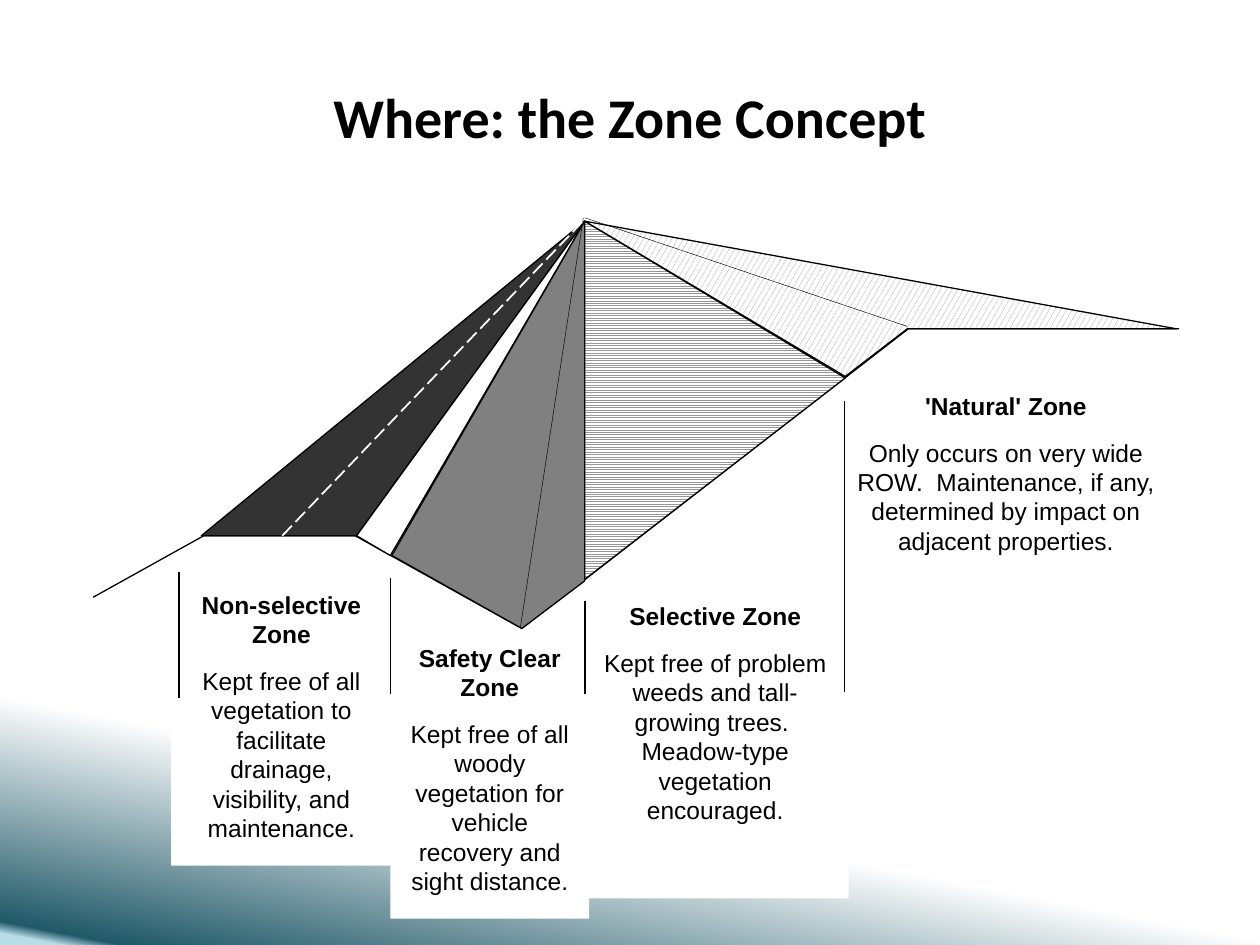
from dataclasses import dataclass

from lxml import etree
from pptx import Presentation
from pptx.dml.color import RGBColor
from pptx.enum.dml import MSO_LINE, MSO_PATTERN
from pptx.enum.shapes import MSO_CONNECTOR, MSO_SHAPE
from pptx.enum.text import MSO_ANCHOR, PP_ALIGN
from pptx.oxml import parse_xml
from pptx.oxml.ns import nsdecls, qn
from pptx.slide import Slide
from pptx.util import Cm, Pt

CENTER = PP_ALIGN.CENTER
TOP, MIDDLE = MSO_ANCHOR.TOP, MSO_ANCHOR.MIDDLE
RECTANGLE = MSO_SHAPE.RECTANGLE
STRAIGHT = MSO_CONNECTOR.STRAIGHT
LONG_DASH = MSO_LINE.LONG_DASH
HORIZONTAL = MSO_PATTERN.LIGHT_HORIZONTAL
CONFETTI = MSO_PATTERN.LARGE_CONFETTI

BLACK, WHITE, HATCH = "000000", "FFFFFF", "969696"
BACKGROUND_STOPS = [(79, WHITE), (98, "215968"), (99, "B7DEE8")]
BACKGROUND_ANGLE = 101

Point = tuple[float, float]  # centimetres


@dataclass
class Area:
    points: list[Point]
    fill: str | None = None
    pattern: MSO_PATTERN | None = None
    closed: bool = True


@dataclass
class Line:
    start: Point
    end: Point
    color: str = BLACK
    width: float = 0.75
    dash: MSO_LINE | None = None


@dataclass
class Zone:
    left: float
    top: float
    width: float
    height: float
    heading: str
    description: str


VANISHING_POINT = (11.79, 4.46)
DITCH = (10.52, 12.67)
AREAS = [
    Area([(1.88, 12.04), (4.11, 10.8), (7.16, 10.8), DITCH, (18.31, 6.63), (23.77, 6.63)],
         closed=False),
    Area([VANISHING_POINT, (7.19, 10.8), (4.06, 10.8)], "333333"),
    Area([VANISHING_POINT, (7.87, 11.2), (7.19, 10.8)], WHITE),
    Area([VANISHING_POINT, (11.79, 11.71), DITCH, (7.9, 11.2)], "808080"),
    Area([VANISHING_POINT, (17.04, 7.62), (11.79, 11.68)], HATCH, HORIZONTAL),
    Area([VANISHING_POINT, (23.72, 6.63), (18.29, 6.63), (17.04, 7.59)], HATCH, CONFETTI),
]
CREASES = [
    Line((10.49, 12.65), (11.76, 4.39), width=0.25),
    Line((18.29, 6.58), (11.79, 4.39), width=0.25),
    Line((5.69, 10.8), (11.76, 4.45), WHITE, 1, LONG_DASH),
]
ZONES = [
    Zone(3.45, 11.76, 4.45, 5.69, "Non-selective Zone",
         "Kept free of all vegetation to facilitate drainage, visibility, and maintenance."),
    Zone(7.87, 12.83, 4.01, 5.69, "Safety Clear Zone",
         "Kept free of all woody vegetation for vehicle recovery and sight distance."),
    Zone(11.73, 11.99, 5.38, 6.12, "Selective Zone",
         "Kept free of problem weeds and tall-growing trees.  "
         "Meadow-type vegetation encouraged."),
    Zone(16.99, 7.75, 6.58, 5.56, "'Natural' Zone",
         "Only occurs on very wide ROW.  Maintenance, if any, "
         "determined by impact on adjacent properties."),
]
DIVIDERS = [
    Line((7.87, 11.66), (7.87, 14)),
    Line((3.61, 11.53), (3.61, 14.07)),
    Line((11.79, 12.12), (11.79, 14)),
    Line((17.02, 8.08), (17.02, 13.94)),
]


def rgb(color: str) -> RGBColor:
    return RGBColor.from_string(color)


def set_background(slide: Slide) -> None:
    """Put in a gradient with more stops than python-pptx can add."""
    stops = "".join(
        f'<a:gs pos="{position * 1000}"><a:srgbClr val="{color}"/></a:gs>'
        for position, color in BACKGROUND_STOPS
    )
    background = parse_xml(
        f'<p:bg {nsdecls("p", "a")}><p:bgPr><a:gradFill rotWithShape="1">'
        f'<a:gsLst>{stops}</a:gsLst><a:lin ang="{BACKGROUND_ANGLE * 60000}" scaled="0"/>'
        "</a:gradFill><a:effectLst/></p:bgPr></p:bg>"
    )
    slide.element.cSld.insert(0, background)


def add_title(slide: Slide, text: str) -> None:
    title = slide.shapes.title
    title.left, title.top, title.width, title.height = Cm(1.27), Cm(0.76), Cm(22.86), Cm(3.18)
    title.text_frame.text = text
    title.text_frame.vertical_anchor = MIDDLE
    paragraph = title.text_frame.paragraphs[0]
    paragraph.alignment = CENTER
    font = paragraph.font
    font.name, font.size, font.bold = "Calibri", Pt(32), True
    font.color.rgb = rgb(BLACK)


def add_area(slide: Slide, area: Area) -> None:
    points = [(Cm(x), Cm(y)) for x, y in area.points]
    builder = slide.shapes.build_freeform(*points[0])
    builder.add_line_segments(points[1:], close=area.closed)
    shape = builder.convert_to_shape()
    shape.shadow.inherit = False
    shape.line.color.rgb = rgb(BLACK)
    shape.line.width = Pt(0.75)
    if area.fill is None:
        shape.fill.background()
    elif area.pattern is None:
        shape.fill.solid()
        shape.fill.fore_color.rgb = rgb(area.fill)
    else:
        shape.fill.patterned()
        shape.fill.pattern = area.pattern
        shape.fill.fore_color.rgb = rgb(area.fill)
        shape.fill.back_color.rgb = rgb(WHITE)


def add_line(slide: Slide, line: Line) -> None:
    ends = [Cm(value) for value in (*line.start, *line.end)]
    connector = slide.shapes.add_connector(STRAIGHT, *ends)
    connector.line.color.rgb = rgb(line.color)
    connector.line.width = Pt(line.width)
    if line.dash is not None:
        connector.line.dash_style = line.dash
    etree.SubElement(connector.element.spPr, qn("a:effectLst"))


def add_zone(slide: Slide, zone: Zone) -> None:
    shape = slide.shapes.add_shape(
        RECTANGLE, Cm(zone.left), Cm(zone.top), Cm(zone.width), Cm(zone.height))
    shape.shadow.inherit = False
    shape.fill.solid()
    shape.fill.fore_color.rgb = rgb(WHITE)
    shape.line.fill.background()
    frame = shape.text_frame
    frame.word_wrap = True
    frame.vertical_anchor = TOP
    frame.text = f"{zone.heading}\n{zone.description}"
    for index, paragraph in enumerate(frame.paragraphs):
        paragraph.alignment = CENTER
        paragraph.space_after = Pt(10)
        font = paragraph.font
        font.name, font.size, font.bold = "Arial", Pt(14), index == 0
        font.color.rgb = rgb(BLACK)


def main() -> None:
    presentation = Presentation()
    presentation.slide_width, presentation.slide_height = Cm(25.4), Cm(19.05)
    slide = presentation.slides.add_slide(presentation.slide_layouts[5])
    set_background(slide)
    add_title(slide, "Where: the Zone Concept")
    for area in AREAS:
        add_area(slide, area)
    for crease in CREASES:
        add_line(slide, crease)
    for zone in ZONES:
        add_zone(slide, zone)
    for divider in DIVIDERS:
        add_line(slide, divider)
    presentation.save("out.pptx")


if __name__ == "__main__":
    main()
